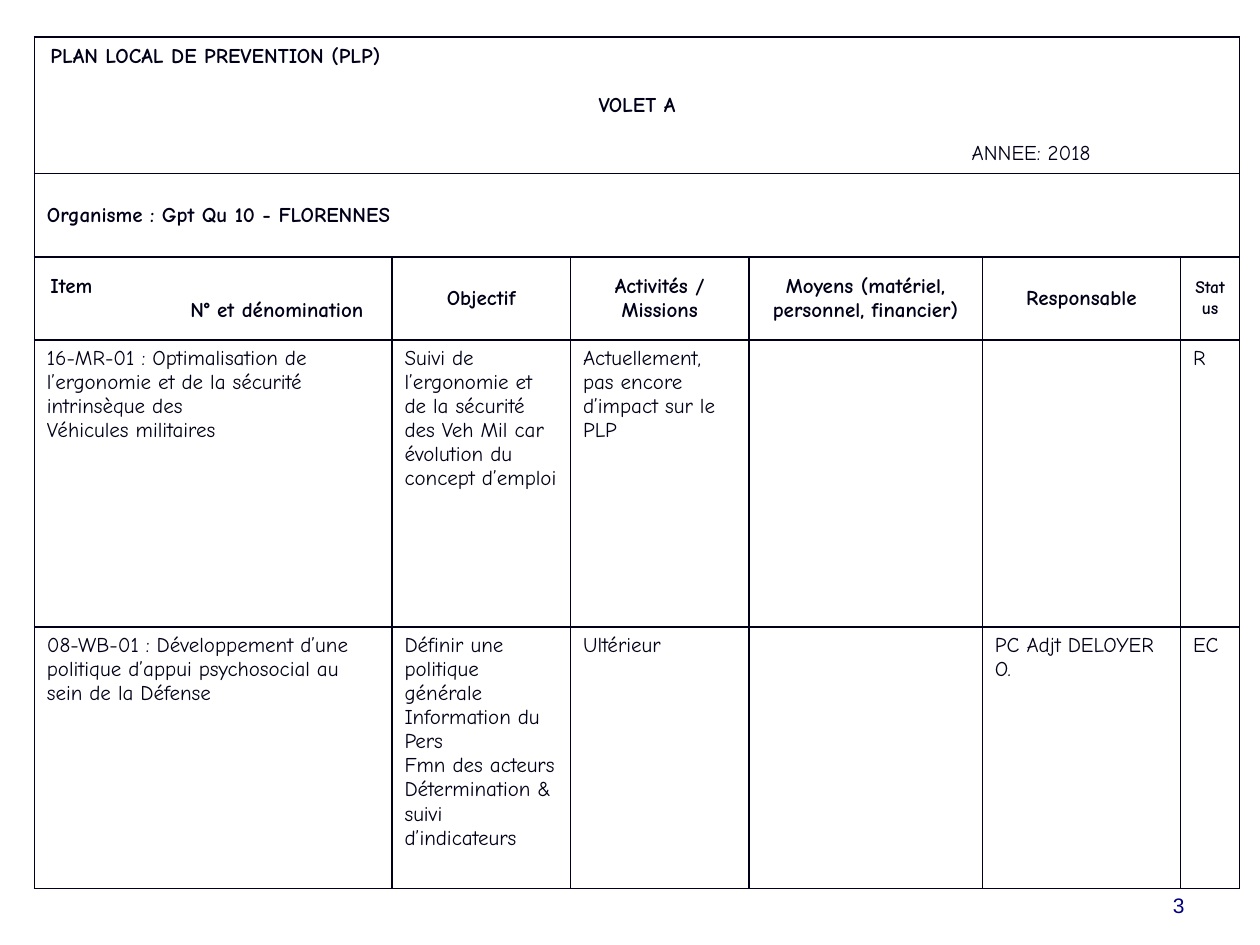
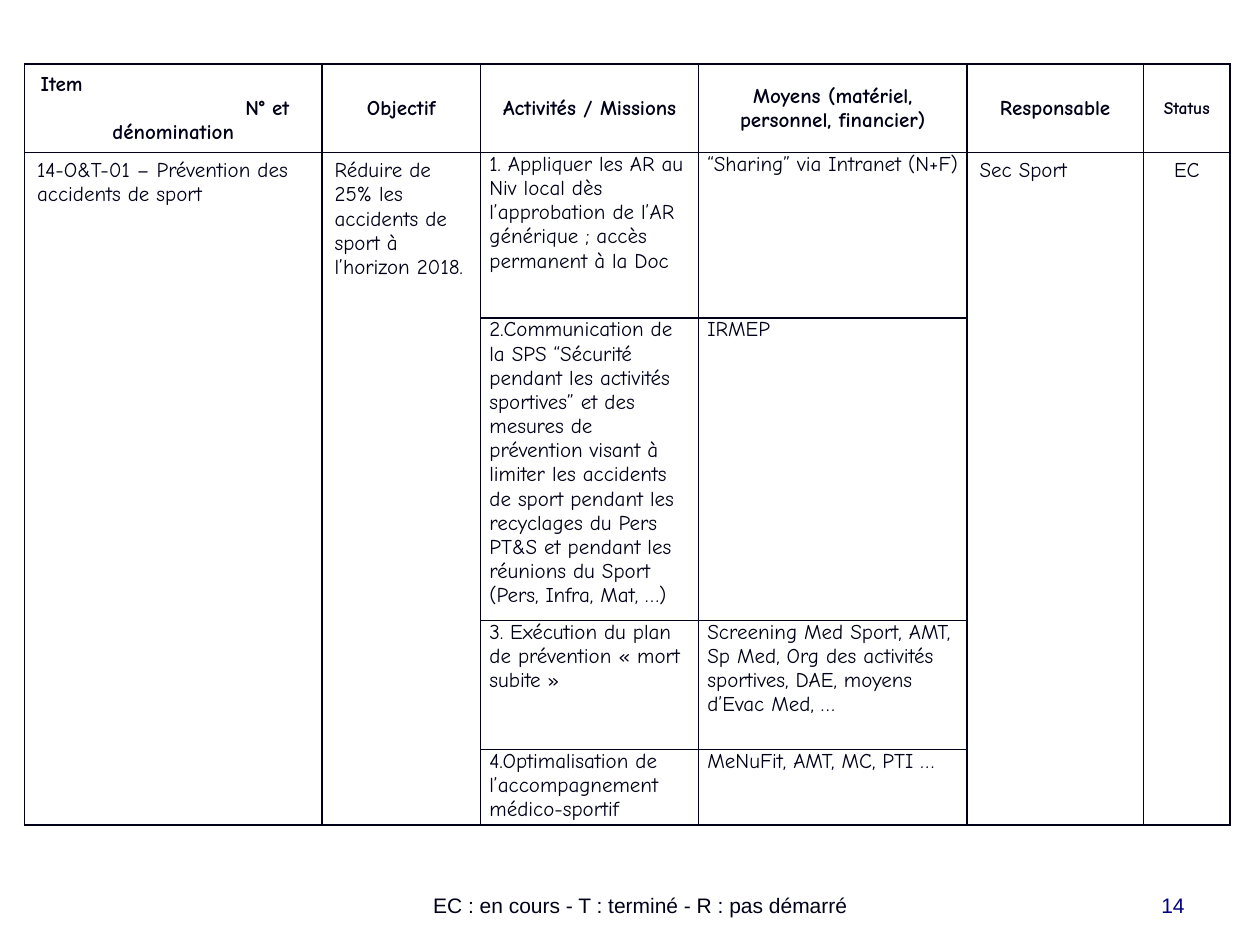
import pptx
import pptx.util
import pptx.dml.color
import pptx.enum.text
import pptx.oxml
import pptx.oxml.ns

Pt = pptx.util.Pt
ALIGN = pptx.enum.text.PP_ALIGN
ANCHOR = pptx.enum.text.MSO_ANCHOR
INK = pptx.dml.color.RGBColor(0x00, 0x00, 0x18)
NAVY = pptx.dml.color.RGBColor(0x00, 0x00, 0x80)
HEADS = ["Objectif", "Activités / Missions",
         "Moyens (matériel, personnel, financier)", "Responsable", "Status"]
WIDE = (7.2, 3.6)
TIGHT = (5, 0)


class Deck:
    font = "Comic Neue"
    size = 12

    def __init__(self):
        self.file = pptx.Presentation()
        self.file.slide_width = Pt(720)
        self.file.slide_height = Pt(540)
        self.slide = None

    def page(self, number):
        self.slide = self.file.slides.add_slide(self.file.slide_layouts[6])
        self.note(516, 168, number, NAVY, ALIGN.RIGHT)

    def style(self, par, font, size, color, bold=False, align=ALIGN.LEFT):
        par.alignment = align
        for run in par.runs:
            run.font.name = font
            run.font.size = Pt(size)
            run.font.bold = bold
            run.font.color.rgb = color

    def note(self, left, width, text, color, align):
        box = self.slide.shapes.add_textbox(Pt(left), Pt(492), Pt(width), Pt(36))
        frame = box.text_frame
        frame.word_wrap = True
        frame.vertical_anchor = ANCHOR.BOTTOM
        frame.text = text
        self.style(frame.paragraphs[0], "Arial", 12, color, align=align)

    def grid(self, left, top, cols, rows):
        frame = self.slide.shapes.add_table(
            len(rows), len(cols), Pt(left), Pt(top), Pt(sum(cols)), Pt(sum(rows)))
        table = frame.table
        table.first_row = table.horz_banding = False
        for col, width in zip(table.columns, cols):
            col.width = Pt(width)
        for row, height in zip(table.rows, rows):
            row.height = Pt(height)
        for cell in table.iter_cells():
            cell.fill.background()
            self.border(cell)
        return table

    def border(self, cell):
        props = cell._tc.get_or_add_tcPr()
        for spot, side in enumerate(("lnL", "lnR", "lnT", "lnB")):
            props.insert(spot, pptx.oxml.parse_xml(
                f'<a:{side} {pptx.oxml.ns.nsdecls("a")} w="{Pt(1)}">'
                f'<a:solidFill><a:srgbClr val="{INK}"/></a:solidFill></a:{side}>'))

    def fill(self, cell, text, inset=WIDE, bold=False, align=ALIGN.LEFT,
             anchor=ANCHOR.TOP, size=size):
        cell.margin_left = cell.margin_right = Pt(inset[0])
        cell.margin_top = cell.margin_bottom = Pt(inset[1])
        cell.vertical_anchor = anchor
        cell.text_frame.text = text
        for par in cell.text_frame.paragraphs:
            self.style(par, self.font, size, INK, bold, align)
        return cell.text_frame.paragraphs

    def indent(self, par, left):
        par._p.get_or_add_pPr().set("marL", str(Pt(left)))

    def head(self, table, row, item, shift):
        pars = self.fill(table.cell(row, 0), item, bold=True, anchor=ANCHOR.MIDDLE)
        self.indent(pars[0], 2)
        self.indent(pars[1], shift)
        for col, text in enumerate(HEADS, 1):
            self.fill(table.cell(row, col), text, bold=True, align=ALIGN.CENTER,
                      anchor=ANCHOR.MIDDLE, size=10 if text == "Status" else 12)
        return pars


def plan(deck):
    deck.page("3")
    table = deck.grid(19.6, 21.2, [204.4, 102, 102, 133.4, 113.3, 33.8],
                      [76, 47.5, 47.5, 164, 149.6])
    for row in (0, 1):
        table.cell(row, 0).merge(table.cell(row, 5))
    name, part, year = deck.fill(
        table.cell(0, 0), "PLAN LOCAL DE PREVENTION (PLP)\nVOLET A\nANNEE: 2018",
        bold=True, anchor=ANCHOR.MIDDLE)
    deck.indent(name, 2)
    part.alignment = ALIGN.CENTER
    deck.indent(year, 528.5)
    year.runs[0].font.bold = False
    for par in (part, year):
        par.space_before = Pt(13.8)
    deck.fill(table.cell(1, 0), "Organisme : Gpt Qu 10 - FLORENNES",
              bold=True, anchor=ANCHOR.MIDDLE)
    deck.head(table, 2, "Item\nN° et dénomination", 82)
    items = [
        ["16-MR-01 : Optimalisation de l’ergonomie et de la sécurité intrinsèque des\n"
         "Véhicules militaires",
         "Suivi de l’ergonomie et de la sécurité des Veh Mil car évolution du concept d’emploi",
         "Actuellement, pas encore d’impact sur le PLP", "", "", "R"],
        ["08-WB-01 : Développement d’une politique d’appui psychosocial au sein de la Défense",
         "Définir une politique générale Information du Pers\nFmn des acteurs\n"
         "Détermination & suivi d’indicateurs",
         "Ultérieur", "", "PC Adjt DELOYER O.", "EC"],
    ]
    for row, texts in enumerate(items, 3):
        for col, text in enumerate(texts):
            deck.fill(table.cell(row, col), text)


def sport(deck):
    deck.page("14")
    deck.note(168, 396, "EC : en cours - T : terminé - R : pas démarré", INK, ALIGN.CENTER)
    table = deck.grid(14, 36.7, [170, 90.7, 124.6, 153.3, 100.8, 49.6],
                      [48.6, 94.6, 170, 73.6, 43.2])
    pars = deck.head(table, 0, "Item\nN° et\ndénomination", 119)
    pars[2].alignment = ALIGN.CENTER
    merged = {0: "14-O&T-01 – Prévention des accidents de sport",
              1: "Réduire de 25% les accidents de sport à l’horizon 2018.",
              4: "Sec Sport", 5: "EC"}
    for col, text in merged.items():
        table.cell(1, col).merge(table.cell(4, col))
        deck.fill(table.cell(1, col), text,
                  align=ALIGN.CENTER if col == 5 else ALIGN.LEFT)
    tasks = [
        ("1. Appliquer les AR au Niv local dès l’approbation de l’AR générique ; "
         "accès permanent à la Doc", "“Sharing” via Intranet (N+F)"),
        ("2.Communication de la SPS “Sécurité pendant les activités sportives” et des "
         "mesures de prévention visant à limiter les accidents de sport pendant les "
         "recyclages du Pers PT&S et pendant les réunions du Sport (Pers, Infra, Mat, …)",
         "IRMEP"),
        ("3. Exécution du plan de prévention « mort subite »",
         "Screening Med Sport, AMT, Sp Med, Org des activités sportives, DAE, "
         "moyens d’Evac Med, …"),
        ("4.Optimalisation de l’accompagnement médico-sportif", "MeNuFit, AMT, MC, PTI …"),
    ]
    for row, pair in enumerate(tasks, 1):
        for col, text in enumerate(pair, 2):
            deck.fill(table.cell(row, col), text, inset=TIGHT)


def main():
    deck = Deck()
    plan(deck)
    sport(deck)
    deck.file.save("out.pptx")


if __name__ == "__main__":
    main()
